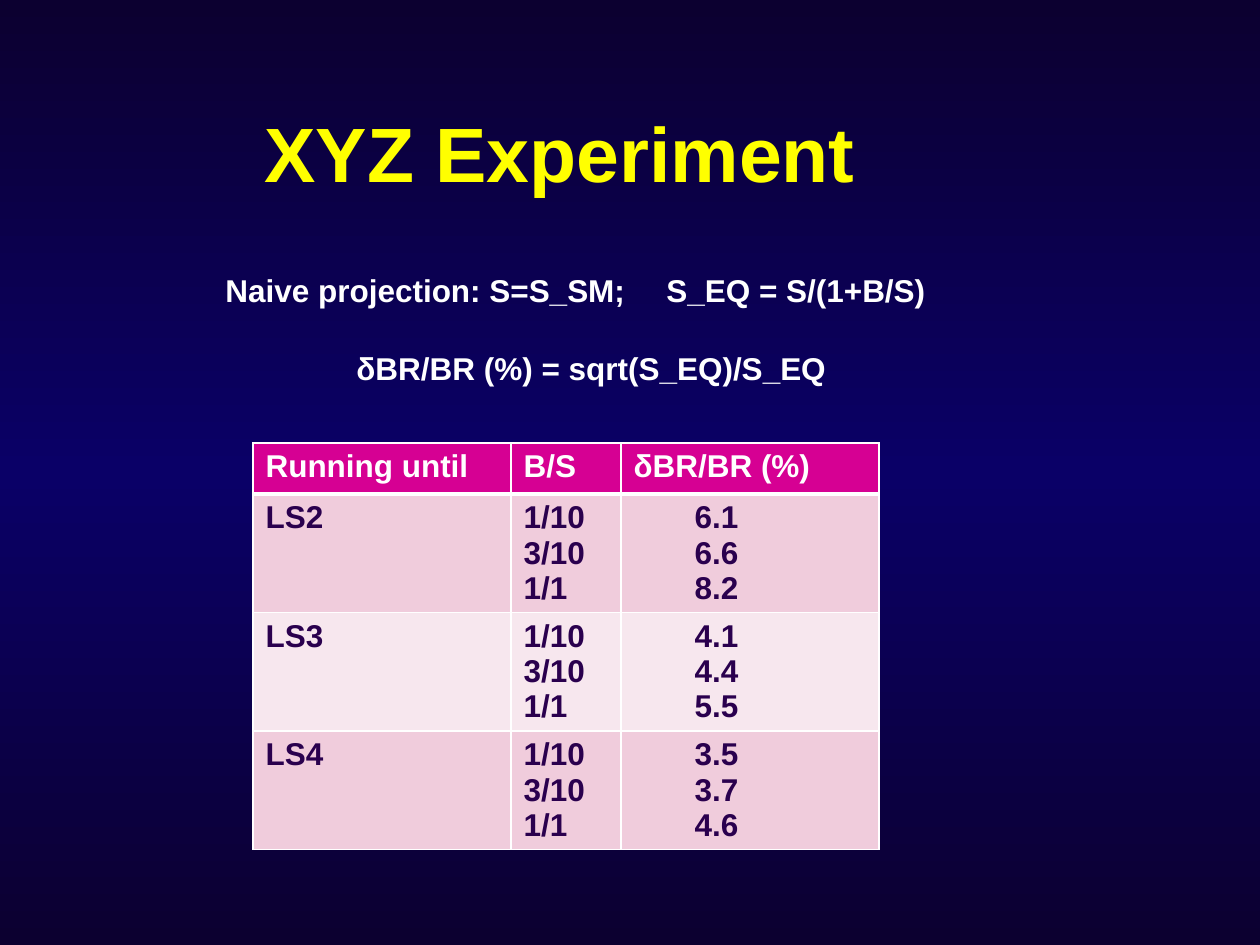
from copy import deepcopy
from dataclasses import dataclass

from pptx import Presentation
from pptx.dml.color import RGBColor
from pptx.enum.text import MSO_ANCHOR, PP_ALIGN
from pptx.oxml.ns import qn
from pptx.oxml.xmlchemy import OxmlElement
from pptx.util import Emu, Pt

TITLE = "XYZ Experiment"
PROJECTION = "Naive projection: S=S_SM;\tS_EQ = S/(1+B/S)"
PRECISION = "δBR/BR (%) = sqrt(S_EQ)/S_EQ"
HEADINGS = ["Running until", "B/S", "δBR/BR (%)"]
RATIOS = ["1/10", "3/10", "1/1"]
RUNS = {
    "LS2": ["6.1", "6.6", "8.2"],
    "LS3": ["4.1", "4.4", "5.5"],
    "LS4": ["3.5", "3.7", "4.6"],
}
COLUMN_WIDTHS = [258, 110, 258]
COLUMN_INDENTS = [0, 0, 61]
HEADER_HEIGHT, RUN_HEIGHT = 51, 118


@dataclass(frozen=True)
class Theme:
    font: str = "Arial"
    title_size: int = 44
    body_size: int = 18
    edge: str = "0C0030"
    middle: str = "0A0067"
    title: str = "FFFF00"
    light: str = "FFFFFF"
    dark: str = "2A004E"
    header: str = "D60093"
    bands: tuple = ("F0CCDC", "F7E7EE")
    thin: int = 1
    thick: int = 3


THEME = Theme()


def px(length):
    return Emu(round(length * 914400 / 126))


def rgb(value):
    return RGBColor.from_string(value)


def write(frame, lines, color=THEME.light, size=THEME.body_size,
          indents=(0,), gap=0, tab=None):
    for index, line in enumerate(lines):
        paragraph = frame.paragraphs[0] if index == 0 else frame.add_paragraph()
        paragraph.alignment = PP_ALIGN.LEFT
        if index and gap:
            paragraph.space_before = Pt(gap)
        properties = paragraph._p.get_or_add_pPr()
        properties.set("marL", str(px(indents[index % len(indents)])))
        properties.set("indent", "0")
        if tab and "\t" in line:
            stops = OxmlElement("a:tabLst")
            stop = OxmlElement("a:tab")
            stop.set("pos", str(px(tab)))
            stop.set("algn", "l")
            stops.append(stop)
            properties.append(stops)
        run = paragraph.add_run()
        run.text = line
        run.font.name = THEME.font
        run.font.size = Pt(size)
        run.font.bold = True
        run.font.color.rgb = rgb(color)


def add_borders(cell, top, bottom):
    widths = {"a:lnL": THEME.thin, "a:lnR": THEME.thin, "a:lnT": top, "a:lnB": bottom}
    for tag, width in widths.items():
        border = OxmlElement(tag)
        border.set("w", str(Pt(width)))
        fill = OxmlElement("a:solidFill")
        color = OxmlElement("a:srgbClr")
        color.set("val", THEME.light)
        fill.append(color)
        border.append(fill)
        cell._tc.get_or_add_tcPr().append(border)


def paint_background(slide):
    fill = slide.background.fill
    fill.gradient()
    fill.gradient_angle = 90
    first, second = fill.gradient_stops
    first.color.rgb, second.color.rgb = rgb(THEME.edge), rgb(THEME.middle)
    first.position, second.position = 0, 0.5
    stops = slide._element.find(".//" + qn("a:gsLst"))
    last = deepcopy(stops[0])
    last.set("pos", "100000")
    stops.append(last)


def add_results(slide):
    rows = [[[heading] for heading in HEADINGS]]
    rows += [[[name], RATIOS, values] for name, values in RUNS.items()]
    heights = [HEADER_HEIGHT] + [RUN_HEIGHT] * len(RUNS)
    results = slide.shapes.add_table(
        len(rows), len(HEADINGS), px(253), px(443),
        px(sum(COLUMN_WIDTHS)), px(sum(heights))).table
    for column, width in zip(results.columns, COLUMN_WIDTHS):
        column.width = px(width)
    for r, (row, height) in enumerate(zip(rows, heights)):
        results.rows[r].height = px(height)
        for c, lines in enumerate(row):
            cell = results.cell(r, c)
            add_borders(cell, THEME.thick if r == 1 else THEME.thin,
                        THEME.thick if r == 0 else THEME.thin)
            cell.fill.solid()
            cell.fill.fore_color.rgb = rgb(
                THEME.bands[(r - 1) % 2] if r else THEME.header)
            write(cell.text_frame, lines, color=THEME.dark if r else THEME.light,
                  indents=(COLUMN_INDENTS[c] if r else 0,))


def main():
    deck = Presentation()
    deck.slide_width, deck.slide_height = px(1260), px(945)
    slide = deck.slides.add_slide(deck.slide_layouts[5])
    paint_background(slide)

    title = slide.shapes.title
    title.left, title.top, title.width, title.height = map(px, (252, 64, 914, 176))
    title.text_frame.vertical_anchor = MSO_ANCHOR.MIDDLE
    write(title.text_frame, [TITLE], color=THEME.title, size=THEME.title_size)

    add_results(slide)

    formulas = slide.shapes.add_textbox(*map(px, (213, 265, 743, 130))).text_frame
    formulas.word_wrap = True
    write(formulas, [PROJECTION, PRECISION], indents=(0, 131), gap=23, tab=443)

    deck.save("out.pptx")


if __name__ == "__main__":
    main()
